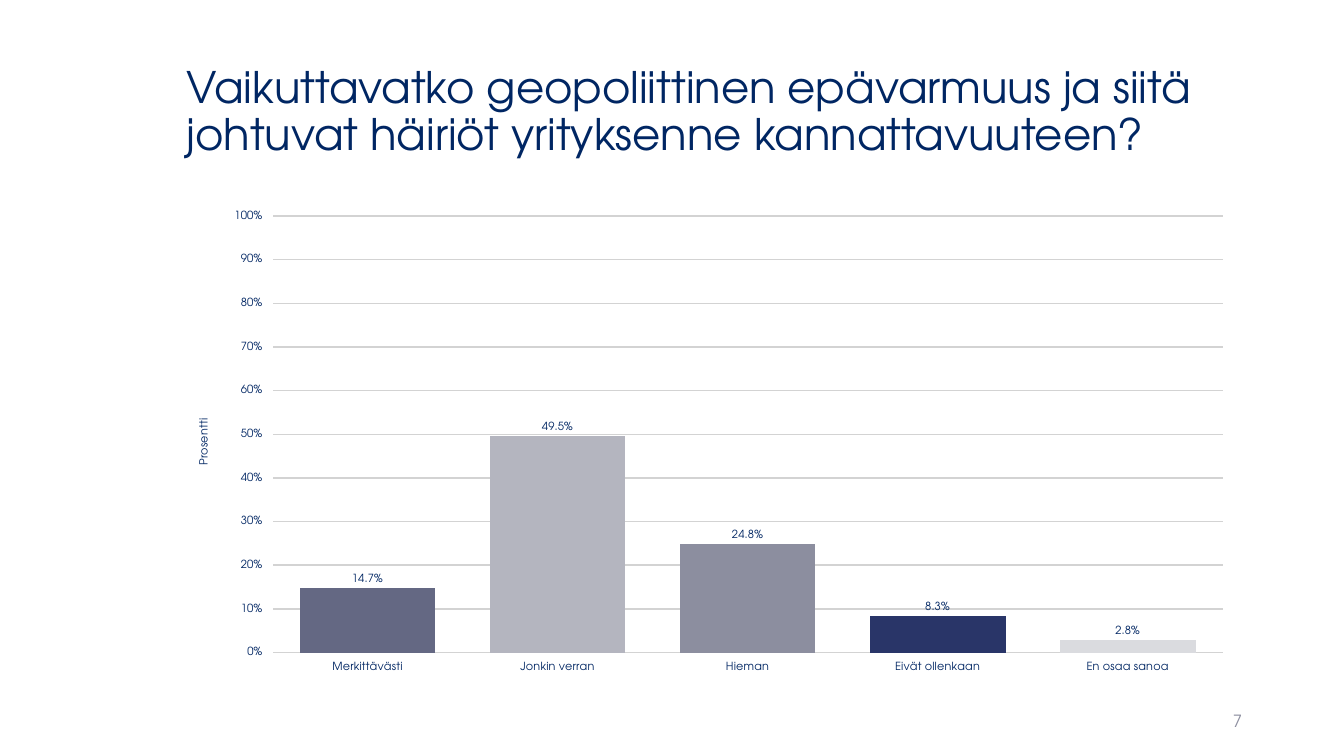
from dataclasses import dataclass

from lxml import etree
from pptx import Presentation
from pptx.chart.data import CategoryChartData
from pptx.dml.color import RGBColor
from pptx.enum.chart import XL_CHART_TYPE, XL_LABEL_POSITION
from pptx.enum.text import MSO_ANCHOR, MSO_AUTO_SIZE, PP_ALIGN
from pptx.oxml.ns import qn
from pptx.util import Inches, Pt

COLUMNS = XL_CHART_TYPE.COLUMN_CLUSTERED
OUTSIDE_END = XL_LABEL_POSITION.OUTSIDE_END
MIDDLE = MSO_ANCHOR.MIDDLE
NO_AUTOFIT = MSO_AUTO_SIZE.NONE
LEFT, RIGHT = PP_ALIGN.LEFT, PP_ALIGN.RIGHT


@dataclass(frozen=True)
class Theme:
    font: str = "TeX Gyre Adventor"
    navy: str = "002663"
    grey: str = "8C8E9F"
    grid: str = "D3D3D3"
    title_size: int = 31
    number_size: int = 12
    chart_size: int = 8


# Answer, share of respondents, column colour
ANSWERS = [
    ("Merkittävästi", 0.147, "646883"),
    ("Jonkin verran", 0.495, "B4B5BF"),
    ("Hieman", 0.248, "8C8E9F"),
    ("Eivät ollenkaan", 0.083, "293568"),
    ("En osaa sanoa", 0.028, "DADBDF"),
]


class SlideBuilder:
    def __init__(self, prs, theme):
        self.theme = theme
        self.slide = prs.slides.add_slide(prs.slide_layouts[5])

    def style(self, font, size, color):
        font.name = self.theme.font
        font.size = Pt(size)
        font.bold = False
        font.color.rgb = RGBColor.from_string(color)

    def set_text(self, sp, text, size, color, align):
        tf = sp.text_frame
        tf.word_wrap = True
        tf.auto_size = NO_AUTOFIT
        tf.vertical_anchor = MIDDLE
        tf.text = text
        p = tf.paragraphs[0]
        p.alignment = align
        self.style(p.runs[0].font, size, color)
        return p

    def title(self, text, left, top, width, height):
        sp = self.slide.shapes.title
        sp.left, sp.top = Inches(left), Inches(top)
        sp.width, sp.height = Inches(width), Inches(height)
        p = self.set_text(sp, text, self.theme.title_size, self.theme.navy, LEFT)
        p.line_spacing = 0.9

    def page_number(self, text, left, top, width, height):
        sp = self.slide.shapes.add_textbox(
            Inches(left), Inches(top), Inches(width), Inches(height))
        p = self.set_text(sp, text, self.theme.number_size, self.theme.grey, RIGHT)
        p.space_after = Pt(6)

    def column_chart(self, answers, axis_title, left, top, width, height):
        theme = self.theme
        names, shares, colors = zip(*answers)
        data = CategoryChartData(number_format="0.0%")
        data.categories = names
        data.add_series("Series 1", shares)
        chart = self.slide.shapes.add_chart(
            COLUMNS, Inches(left), Inches(top), Inches(width), Inches(height),
            data).chart
        chart.has_legend = False
        chart.has_title = False
        self.style(chart.font, theme.chart_size, theme.navy)

        # Columns and their labels
        plot = chart.plots[0]
        plot.gap_width = 40
        plot.overlap = -2
        plot.vary_by_categories = False
        for i, color in enumerate(colors):
            fill = plot.series[0].points[i].format.fill
            fill.solid()
            fill.fore_color.rgb = RGBColor.from_string(color)
        plot.has_data_labels = True
        labels = plot.data_labels
        labels.show_value = True
        labels.number_format = "0.0%"
        labels.number_format_is_linked = False
        labels.position = OUTSIDE_END
        self.style(labels.font, theme.chart_size, theme.navy)

        # Axes
        axis = chart.value_axis
        for ax in (chart.category_axis, axis):
            ax.format.line.fill.background()
            self.style(ax.tick_labels.font, theme.chart_size, theme.navy)
        axis.minimum_scale, axis.maximum_scale = 0, 1
        axis.major_unit = 0.1
        axis.tick_labels.number_format = "0%"
        axis.tick_labels.number_format_is_linked = False
        grid = axis.major_gridlines.format.line
        grid.width = Pt(1)
        grid.color.rgb = RGBColor.from_string(theme.grid)
        tf = axis.axis_title.text_frame
        tf.text = axis_title
        self.style(tf.paragraphs[0].runs[0].font, theme.chart_size, theme.navy)

        self.place_plot(chart, x=0.09, y=0.03, w=0.89, h=0.91)

    def place_plot(self, chart, **fractions):
        area = chart.plots[0]._element.getparent()
        for old in area.findall(qn("c:layout")):
            area.remove(old)
        layout = etree.Element(qn("c:layout"))
        area.insert(0, layout)
        manual = etree.SubElement(layout, qn("c:manualLayout"))
        settings = {"layoutTarget": "inner", "xMode": "edge", "yMode": "edge"}
        for name, value in {**settings, **fractions}.items():
            etree.SubElement(manual, qn(f"c:{name}")).set("val", str(value))


def main():
    prs = Presentation()
    prs.slide_width, prs.slide_height = Inches(13.33), Inches(7.5)
    s = SlideBuilder(prs, Theme())
    s.title("Vaikuttavatko geopoliittinen epävarmuus ja siitä johtuvat "
            "häiriöt yrityksenne kannattavuuteen?", 1.75, 0.4, 10.59, 1.45)
    s.page_number("7", 9.42, 6.95, 3, 0.4)
    s.column_chart(ANSWERS, "Prosentti", 1.75, 2, 10.59, 4.76)
    prs.save("out.pptx")


if __name__ == "__main__":
    main()
